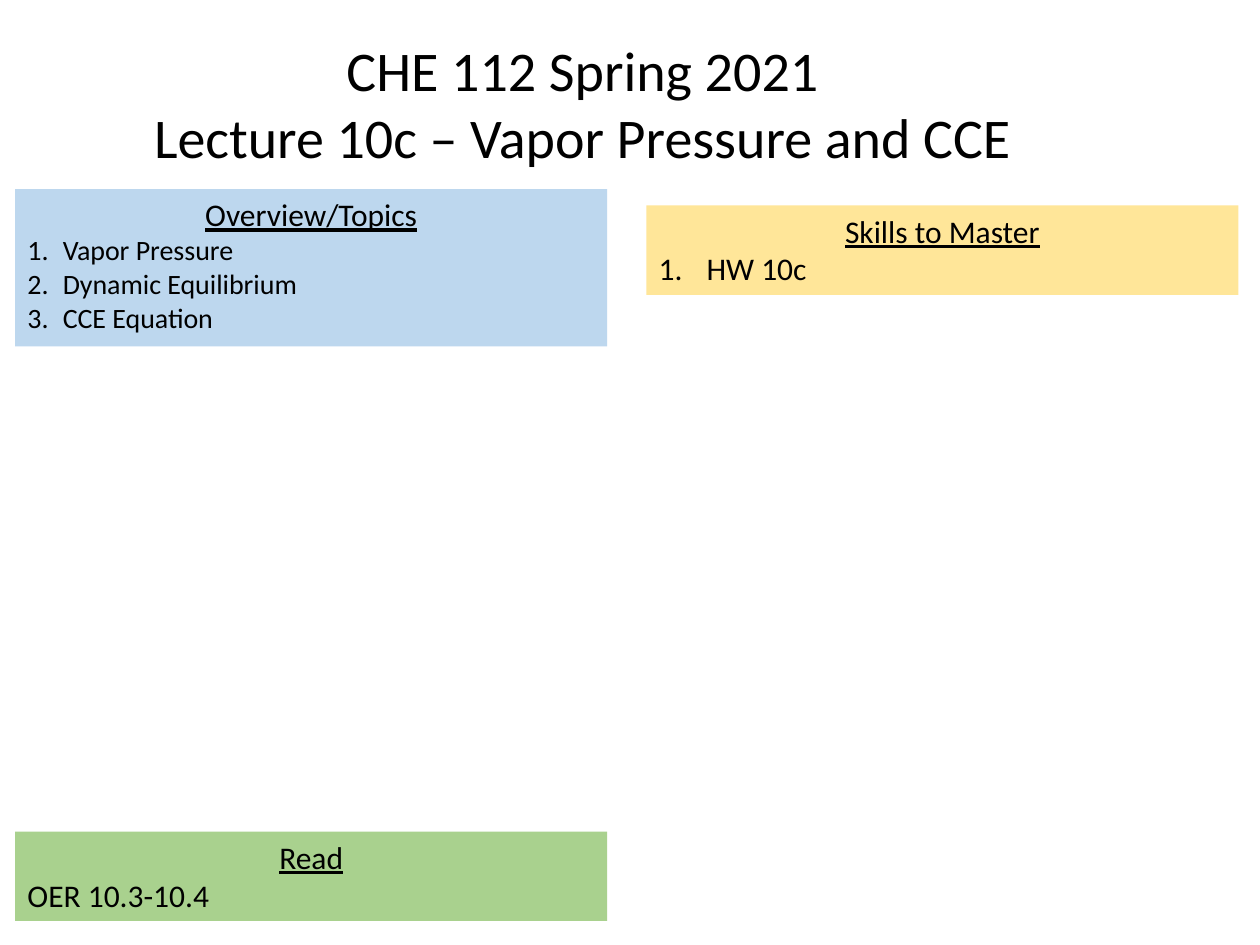
from dataclasses import dataclass

from lxml.etree import SubElement
from pptx import Presentation
from pptx.dml.color import RGBColor
from pptx.enum.text import MSO_ANCHOR, PP_ALIGN
from pptx.oxml.ns import qn
from pptx.slide import Slide
from pptx.util import Inches, Pt

FONT = "Calibri"
COLORS = {
    "text": "000000",
    "overview": "BDD7EE",
    "skills": "FFE699",
    "read": "A9D18E",
}
LEFT_COLUMN, RIGHT_COLUMN = 0.12, 5.13
PANEL_WIDTH = 4.7


@dataclass(frozen=True)
class Panel:
    heading: str
    lines: tuple[str, ...]
    left: float
    top: float
    height: float
    color: str
    size: int = 18
    number_indent: float = 0  # zero leaves the lines unnumbered


PANELS = (
    Panel("Overview/Topics", ("Vapor Pressure", "Dynamic Equilibrium", "CCE Equation"),
          LEFT_COLUMN, 1.5, 1.25, "overview", size=16, number_indent=0.28),
    Panel("Skills to Master", ("HW 10c",),
          RIGHT_COLUMN, 1.63, 0.71, "skills", number_indent=0.38),
    Panel("Read", ("OER 10.3-10.4",), LEFT_COLUMN, 6.6, 0.71, "read"),
)


def format_paragraph(paragraph, size: int, align: PP_ALIGN, underline: bool = False) -> None:
    paragraph.alignment = align
    paragraph.font.name = FONT
    paragraph.font.size = Pt(size)
    paragraph.font.underline = underline
    paragraph.font.color.rgb = RGBColor.from_string(COLORS["text"])


def number_paragraph(paragraph, indent: float) -> None:
    """Give the paragraph an automatic number with a hanging indent."""
    properties = paragraph._p.get_or_add_pPr()
    properties.set("marL", str(Inches(indent)))
    properties.set("indent", str(-Inches(indent)))
    numbering = properties.makeelement(qn("a:buAutoNum"), {"type": "arabicPeriod"})
    properties.insert_element_before(numbering, "a:tabLst", "a:defRPr", "a:extLst")


def add_title(slide: Slide) -> None:
    title = slide.shapes.title
    title.left, title.top = Inches(1.08), Inches(0.23)
    title.width, title.height = Inches(7.09), Inches(1.18)
    frame = title.text_frame
    frame.text = "CHE 112 Spring 2021\nLecture 10c – Vapor Pressure and CCE"
    frame.word_wrap = False
    frame.vertical_anchor = MSO_ANCHOR.TOP
    for paragraph in frame.paragraphs:
        format_paragraph(paragraph, 32, PP_ALIGN.CENTER)


def add_panel(slide: Slide, panel: Panel) -> None:
    box = slide.shapes.add_textbox(Inches(panel.left), Inches(panel.top),
                                   Inches(PANEL_WIDTH), Inches(panel.height))
    box.fill.solid()
    box.fill.fore_color.rgb = RGBColor.from_string(COLORS[panel.color])
    frame = box.text_frame
    frame.word_wrap = True
    frame.text = "\n".join((panel.heading, *panel.lines))
    heading, *lines = frame.paragraphs
    format_paragraph(heading, 18, PP_ALIGN.CENTER, underline=True)
    for line in lines:
        format_paragraph(line, panel.size, PP_ALIGN.LEFT)
        if panel.number_indent:
            number_paragraph(line, panel.number_indent)


def main() -> None:
    presentation = Presentation()
    presentation.slide_width, presentation.slide_height = Inches(10), Inches(7.5)
    slide = presentation.slides.add_slide(presentation.slide_layouts[5])
    for panel in PANELS:
        add_panel(slide, panel)
    add_title(slide)
    presentation.save("out.pptx")


if __name__ == "__main__":
    main()
